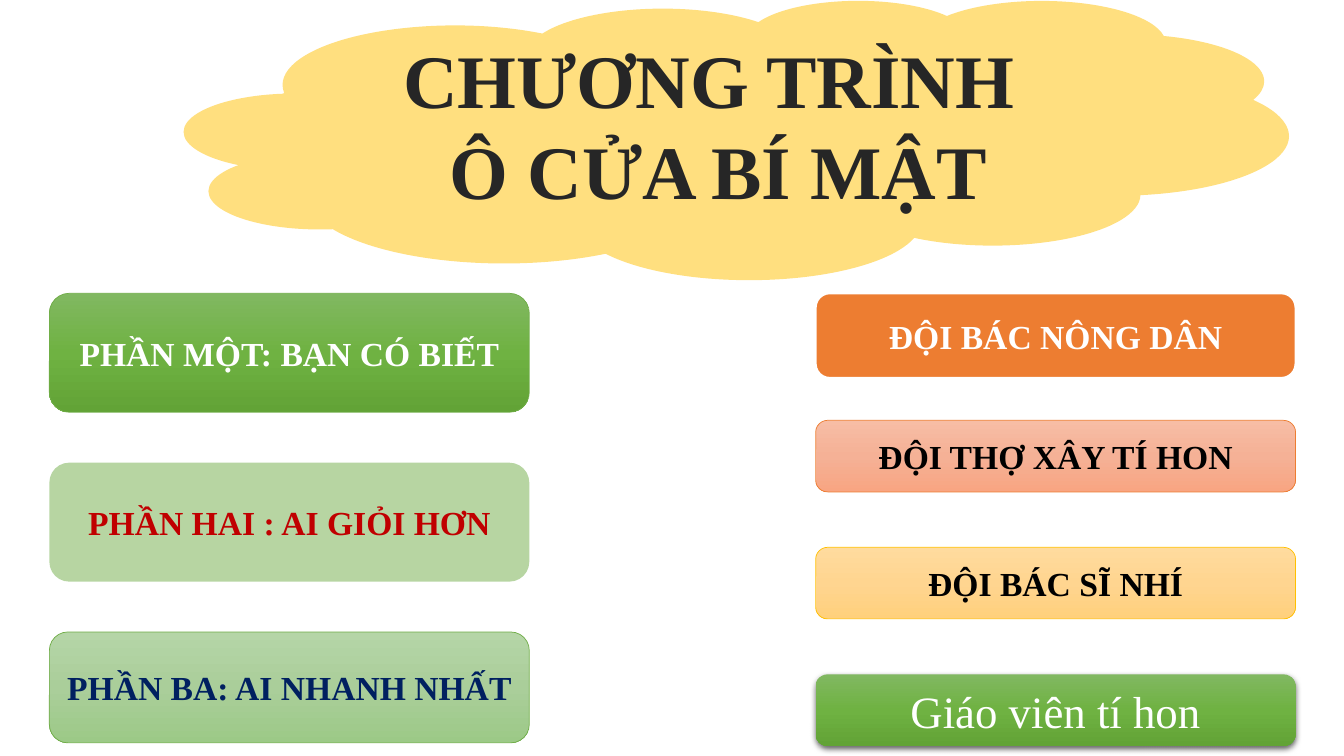
from dataclasses import dataclass

from lxml.etree import SubElement
from pptx import Presentation
from pptx.dml.color import RGBColor
from pptx.enum.shapes import MSO_SHAPE
from pptx.enum.text import MSO_ANCHOR, MSO_AUTO_SIZE, PP_ALIGN
from pptx.oxml.ns import qn
from pptx.util import Inches, Pt


@dataclass(frozen=True)
class Theme:
    font: str = "Times New Roman"
    title_size: int = 54
    label_size: int = 24
    teacher_size: int = 32
    white: str = "FFFFFF"
    black: str = "000000"
    ink: str = "262626"
    red: str = "C00000"
    navy: str = "002060"
    green: str = "70AD47"
    orange: str = "ED7D31"
    gold: str = "FFC000"
    green_blend: tuple = ("81B861", "6FB242", "62A336")
    pale_green_blend: tuple = ("B5D5A7", "AACE9A", "9CC987")
    salmon_blend: tuple = ("F7BDA5", "F5B196", "F8A582")
    gold_blend: tuple = ("FFDB9E", "FFD590", "FFD07C")


def add_color(parent, color, alpha=None):
    node = SubElement(parent, qn("a:srgbClr"), val=color)
    if alpha is not None:
        SubElement(node, qn("a:alpha"), val=str(alpha * 1000))


class SlideBuilder:
    def __init__(self, page, theme):
        self.page = page
        self.theme = theme

    def paint(self, shape, fill, alpha=None):
        """Fill with one colour, or with a tuple blended from top to bottom."""
        if isinstance(fill, tuple):
            shape.fill.gradient()
            shape.fill.gradient_angle = 270
            stops = shape._element.spPr.find(qn("a:gradFill")).find(qn("a:gsLst"))
            stops.clear()
            for index, color in enumerate(fill):
                position = index * 100000 // (len(fill) - 1)
                add_color(SubElement(stops, qn("a:gs"), pos=str(position)), color)
            return
        shape.fill.solid()
        shape.fill.fore_color.rgb = RGBColor.from_string(fill)
        if alpha is not None:
            color = shape._element.spPr.find(qn("a:solidFill"))[0]
            SubElement(color, qn("a:alpha"), val=str(alpha * 1000))

    def shape(self, kind, bounds, fill, alpha=None, line=None, width=0.5):
        shape = self.page.shapes.add_shape(kind, *map(Inches, bounds))
        shape.shadow.inherit = False
        self.paint(shape, fill, alpha)
        if line:
            shape.line.color.rgb = RGBColor.from_string(line)
            shape.line.width = Pt(width)
        else:
            shape.line.fill.background()
        return shape

    def add_span(self, para, text, color, size, bold=True):
        para.alignment = PP_ALIGN.CENTER
        span = para.add_run()
        span.text = text
        formats = {"name": self.theme.font, "size": Pt(size), "bold": bold}
        for name, value in formats.items():
            setattr(span.font, name, value)
        span.font.color.rgb = RGBColor.from_string(color)
        return span

    def button(self, bounds, text, color, fill, size=None, bold=True, **look):
        box = self.shape(MSO_SHAPE.ROUNDED_RECTANGLE, bounds, fill, **look)
        box.text_frame.word_wrap = True
        box.text_frame.vertical_anchor = MSO_ANCHOR.MIDDLE
        self.add_span(box.text_frame.paragraphs[0], text, color,
                      size or self.theme.label_size, bold)
        return box

    def title(self, bounds, lines):
        box = self.page.shapes.add_textbox(*map(Inches, bounds))
        frame = box.text_frame
        frame.word_wrap = False
        frame.auto_size = MSO_AUTO_SIZE.SHAPE_TO_FIT_TEXT
        for index, text in enumerate(lines):
            para = frame.add_paragraph() if index else frame.paragraphs[0]
            span = self.add_span(para, text, self.theme.ink, self.theme.title_size)
            # Thin white outline around the letters
            properties = span._r.get_or_add_rPr()
            outline = SubElement(properties, qn("a:ln"), w=str(Pt(1.06)))
            add_color(SubElement(outline, qn("a:solidFill")), self.theme.white)
            properties.insert(0, outline)

    def drop_shadow(self, shape):
        effects = shape._element.spPr.find(qn("a:effectLst"))
        shadow = SubElement(effects, qn("a:outerShdw"), blurRad=str(Pt(4.5)),
                            dist=str(Pt(1.5)), dir="5400000", rotWithShape="0")
        add_color(shadow, self.theme.black, 63)


def main():
    deck = Presentation()
    deck.slide_width, deck.slide_height = Inches(13.33), Inches(7.5)
    theme = Theme()
    builder = SlideBuilder(deck.slides.add_slide(deck.slide_layouts[6]), theme)

    # Title on a cloud
    builder.shape(MSO_SHAPE.CLOUD, (1.83, 0, 10.95, 2.77), theme.gold, alpha=50)
    builder.title((3.87, 0.28, 6.51, 1.92), ["CHƯƠNG TRÌNH ", "Ô CỬA BÍ MẬT"])

    top, width = 2.91, 4.76

    # Left column: the three rounds
    rounds = [
        ("PHẦN MỘT: BẠN CÓ BIẾT", theme.white, theme.green_blend, 1.18,
         {"line": theme.green}),
        ("PHẦN HAI : AI GIỎI HƠN", theme.red, theme.green, 1.18, {"alpha": 50}),
        ("PHẦN BA: AI NHANH NHẤT", theme.navy, theme.pale_green_blend, 1.1,
         {"line": theme.green}),
    ]
    for row, (text, color, fill, height, look) in enumerate(rounds):
        builder.button((0.49, top + row * 1.68, width, height),
                       text, color, fill, **look)

    # Right column: the teams
    teams = [
        ("ĐỘI BÁC NÔNG DÂN", theme.white, theme.orange, 0.84,
         {"line": theme.white, "width": 1.5}),
        ("ĐỘI THỢ XÂY TÍ HON", theme.black, theme.salmon_blend, 0.71,
         {"line": theme.orange}),
        ("ĐỘI BÁC SĨ NHÍ", theme.black, theme.gold_blend, 0.71,
         {"line": theme.gold}),
        ("Giáo viên tí hon", theme.white, theme.green_blend, 0.71,
         {"size": theme.teacher_size, "bold": False}),
    ]
    for row, (text, color, fill, height, look) in enumerate(teams):
        team = builder.button((8.09, top + row * 1.26, width, height),
                              text, color, fill, **look)
    builder.drop_shadow(team)

    deck.save("out.pptx")


if __name__ == "__main__":
    main()
